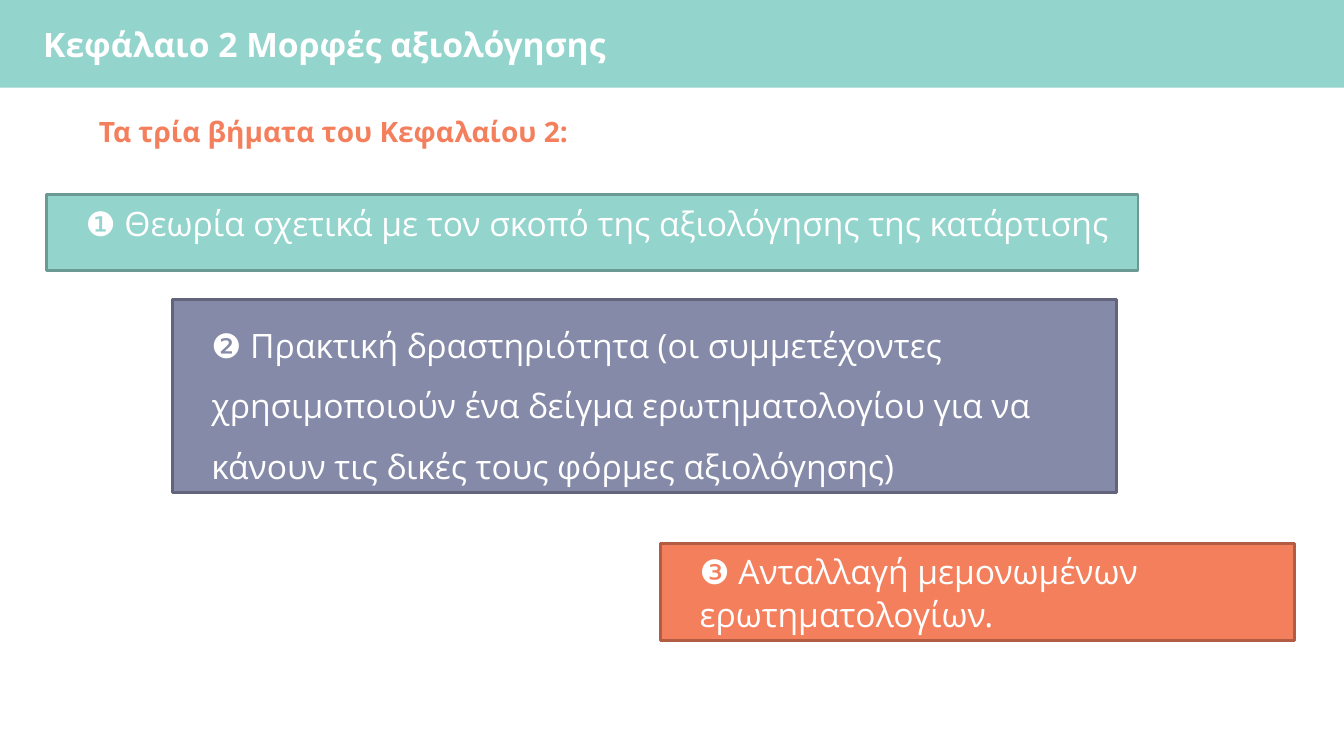
from pptx import Presentation
from pptx.dml.color import RGBColor
from pptx.enum.shapes import MSO_SHAPE
from pptx.enum.text import MSO_ANCHOR, PP_ALIGN
from pptx.util import Cm, Pt

WHITE = RGBColor(0xFF, 0xFF, 0xFF)
TEAL = RGBColor(0x93, 0xD4, 0xCC)
TEAL_DARK = RGBColor(0x6B, 0x9A, 0x94)
VIOLET = RGBColor(0x85, 0x8A, 0xA8)
VIOLET_DARK = RGBColor(0x61, 0x64, 0x7A)
ORANGE = RGBColor(0xF4, 0x7F, 0x5D)
ORANGE_DARK = RGBColor(0xB2, 0x5C, 0x43)

SLIDE_WIDTH, SLIDE_HEIGHT = Cm(33.87), Cm(19.05)
INSET = Cm(0.25)
INDENT = Cm(0.74)
LINE_SPACING = 1.07

STEPS = [
    ("❶ Θεωρία σχετικά με τον σκοπό της αξιολόγησης της κατάρτισης",
     (Cm(1.17), Cm(4.9), Cm(27.51), Cm(1.91)), TEAL, TEAL_DARK,
     {"alignment": PP_ALIGN.JUSTIFY, "line_spacing": LINE_SPACING,
      "space_before": Pt(10), "space_after": Pt(8)}),
    ("❷ Πρακτική δραστηριότητα (οι συμμετέχοντες χρησιμοποιούν ένα δείγμα "
     "ερωτηματολογίου για να κάνουν τις δικές τους φόρμες αξιολόγησης)",
     (Cm(4.34), Cm(7.54), Cm(23.8), Cm(4.88)), VIOLET, VIOLET_DARK,
     {"alignment": PP_ALIGN.LEFT, "line_spacing": 1.5}),
    ("❸ Ανταλλαγή μεμονωμένων ερωτηματολογίων.",
     (Cm(16.64), Cm(13.69), Cm(15.98), Cm(2.46)), ORANGE, ORANGE_DARK,
     {"alignment": PP_ALIGN.LEFT, "line_spacing": LINE_SPACING}),
]


def apply_formats(target, formats):
    for name, value in formats.items():
        setattr(target, name, value)


def write_text(shape, text, color, font_formats, paragraph_formats, indent=0):
    frame = shape.text_frame
    apply_formats(frame, {
        "word_wrap": True, "vertical_anchor": MSO_ANCHOR.TOP,
        "margin_left": INSET + indent, "margin_right": INSET,
        "margin_top": Cm(0.13), "margin_bottom": Cm(0.13),
    })
    paragraph = frame.paragraphs[0]
    apply_formats(paragraph, paragraph_formats)
    run = paragraph.add_run()
    run.text = text
    apply_formats(run.font, {"name": "Open Sans", **font_formats})
    run.font.color.rgb = color


def add_box(slide, box, fill, outline=None):
    shape = slide.shapes.add_shape(MSO_SHAPE.RECTANGLE, *box)
    shape.shadow.inherit = False
    shape.fill.solid()
    shape.fill.fore_color.rgb = fill
    if outline is None:
        shape.line.fill.background()
    else:
        shape.line.color.rgb = outline
        shape.line.width = Pt(2)
    return shape


def add_header(slide, box, title):
    left, top, width, height = box
    add_box(slide, box, TEAL)
    text_box = slide.shapes.add_textbox(
        left + Cm(0.84), top + Cm(0.48), width - Cm(2.25), Cm(1.27))
    write_text(text_box, title, WHITE, {"size": Pt(24), "bold": True}, {})


def add_heading(slide, box, heading):
    write_text(slide.shapes.add_textbox(*box), heading, ORANGE,
               {"size": Pt(20), "bold": True},
               {"line_spacing": LINE_SPACING}, INDENT)


def add_step(slide, box, text, fill, outline, paragraph_formats):
    write_text(add_box(slide, box, fill, outline), text, WHITE,
               {"size": Pt(24)}, paragraph_formats, INDENT)


def main():
    presentation = Presentation()
    apply_formats(presentation, {"slide_width": SLIDE_WIDTH,
                                 "slide_height": SLIDE_HEIGHT})
    slide = presentation.slides.add_slide(presentation.slide_layouts[6])
    add_header(slide, (0, 0, SLIDE_WIDTH, Cm(2.21)),
               "Κεφάλαιο 2 Μορφές αξιολόγησης")
    add_heading(slide, (Cm(1.5), Cm(2.69), Cm(16.94), Cm(1.17)),
                "Τα τρία βήματα του Κεφαλαίου 2:")
    for text, box, fill, outline, paragraph_formats in STEPS:
        add_step(slide, box, text, fill, outline, paragraph_formats)
    presentation.save("out.pptx")


if __name__ == "__main__":
    main()
